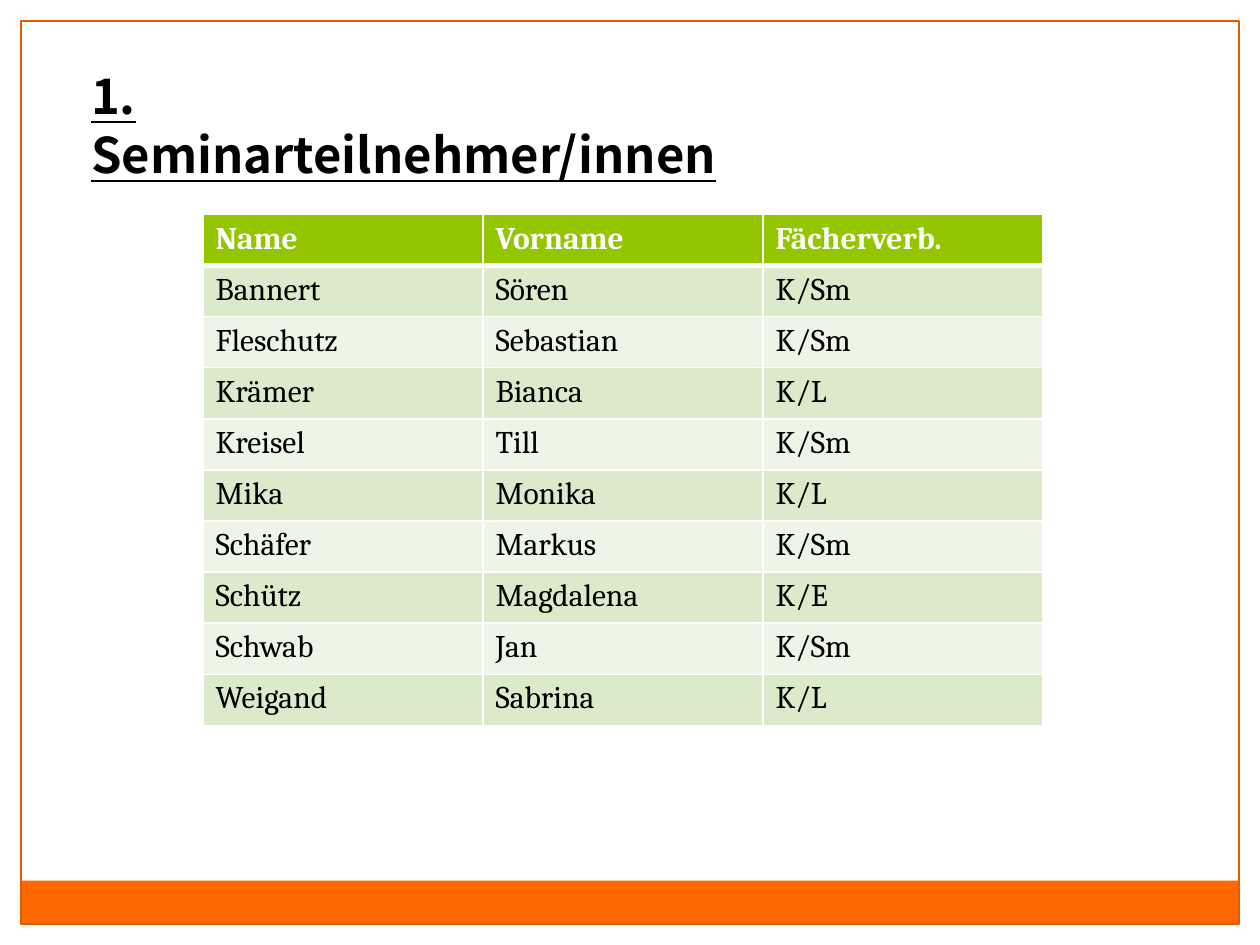
from typing import NamedTuple, Optional

from lxml.etree import SubElement
from pptx import Presentation
from pptx.dml.color import RGBColor
from pptx.enum.shapes import MSO_SHAPE as Shape
from pptx.oxml.ns import qn
from pptx.util import Pt

WHITE = RGBColor(0xFF, 0xFF, 0xFF)
BLACK = RGBColor(0, 0, 0)
ORANGE = RGBColor(0xFF, 0x67, 0x00)
DARK_ORANGE = RGBColor(0xE1, 0x5B, 0x00)
GREEN = RGBColor(0x94, 0xC6, 0x00)
BANDS = (RGBColor(0xEE, 0xF5, 0xE7), RGBColor(0xDC, 0xEA, 0xCC))

WIDTH, HEIGHT, MARGIN = 720, 540, 12
COL_WIDTH, ROW_HEIGHT = 160, 29.2


class Panel(NamedTuple):
    left: float
    top: float
    width: float
    height: float
    fill: Optional[RGBColor] = None
    line: Optional[RGBColor] = None


class Participant(NamedTuple):
    name: str
    first_name: str
    subjects: str


PANELS = [
    Panel(0, 0, WIDTH, MARGIN, WHITE),
    Panel(WIDTH - MARGIN, 0, MARGIN, HEIGHT, WHITE),
    Panel(0, 0, MARGIN, HEIGHT, WHITE),
    Panel(MARGIN, 503.3, WIDTH - 2 * MARGIN, 24.5, ORANGE),
    Panel(MARGIN, MARGIN, WIDTH - 2 * MARGIN, HEIGHT - 2 * MARGIN, line=DARK_ORANGE),
]

ROWS = [
    Participant("Name", "Vorname", "Fächerverb."),
    Participant("Bannert", "Sören", "K/Sm"),
    Participant("Fleschutz", "Sebastian", "K/Sm"),
    Participant("Krämer", "Bianca", "K/L"),
    Participant("Kreisel", "Till", "K/Sm"),
    Participant("Mika", "Monika", "K/L"),
    Participant("Schäfer", "Markus", "K/Sm"),
    Participant("Schütz", "Magdalena", "K/E"),
    Participant("Schwab", "Jan", "K/Sm"),
    Participant("Weigand", "Sabrina", "K/L"),
]


def add_panel(s, panel: Panel) -> None:
    sp = s.shapes.add_shape(Shape.RECTANGLE, Pt(panel.left), Pt(panel.top),
                            Pt(panel.width), Pt(panel.height))
    sp.shadow.inherit = False
    if panel.fill is None:
        sp.fill.background()
    else:
        sp.fill.solid()
        sp.fill.fore_color.rgb = panel.fill
    if panel.line is None:
        sp.line.fill.background()
    else:
        sp.line.color.rgb = panel.line
        sp.line.width = Pt(0.75)


def format_run(r, font: str, size: float, color: RGBColor, bold: bool) -> None:
    r.font.name = font
    r.font.size = Pt(size)
    r.font.color.rgb = color
    r.font.bold = bold


def set_borders(cell, top: float, bottom: float) -> None:
    """Draw white cell borders; top and bottom are widths in points."""
    props = cell._tc.get_or_add_tcPr()
    widths = {"a:lnL": 1, "a:lnR": 1, "a:lnT": top, "a:lnB": bottom}
    for index, (tag, width) in enumerate(widths.items()):
        ln = SubElement(props, qn(tag), w=str(Pt(width)))
        fill = SubElement(ln, qn("a:solidFill"))
        SubElement(fill, qn("a:srgbClr"), val=str(WHITE))
        props.insert(index, ln)


def add_participants(s, rows: list[Participant]) -> None:
    columns = len(Participant._fields)
    table = s.shapes.add_table(len(rows), columns, Pt(116), Pt(122.5),
                               Pt(columns * COL_WIDTH),
                               Pt(len(rows) * ROW_HEIGHT)).table
    for column in table.columns:
        column.width = Pt(COL_WIDTH)
    for i, row in enumerate(rows):
        table.rows[i].height = Pt(ROW_HEIGHT)
        header = i == 0
        for j, value in enumerate(row):
            cell = table.cell(i, j)
            cell.fill.solid()
            cell.fill.fore_color.rgb = GREEN if header else BANDS[i % 2]
            set_borders(cell, 3 if i == 1 else 1, 3 if header else 1)
            p = cell.text_frame.paragraphs[0]
            p.text = value
            format_run(p.runs[0], "Cambria", 18, WHITE if header else BLACK, header)


def add_title(s, text: str) -> None:
    tf = s.shapes.add_textbox(Pt(45), Pt(34), Pt(389.5), Pt(41)).text_frame
    tf.word_wrap = True
    tf.text = text
    r = tf.paragraphs[0].runs[0]
    format_run(r, "Noto Sans CJK KR", 28, BLACK, True)
    r.font.underline = True


def main() -> None:
    prs = Presentation()
    prs.slide_width, prs.slide_height = Pt(WIDTH), Pt(HEIGHT)
    s = prs.slides.add_slide(prs.slide_layouts[6])
    for panel in PANELS:
        add_panel(s, panel)
    add_participants(s, ROWS)
    add_title(s, "1. Seminarteilnehmer/innen")
    prs.save("out.pptx")


if __name__ == "__main__":
    main()
